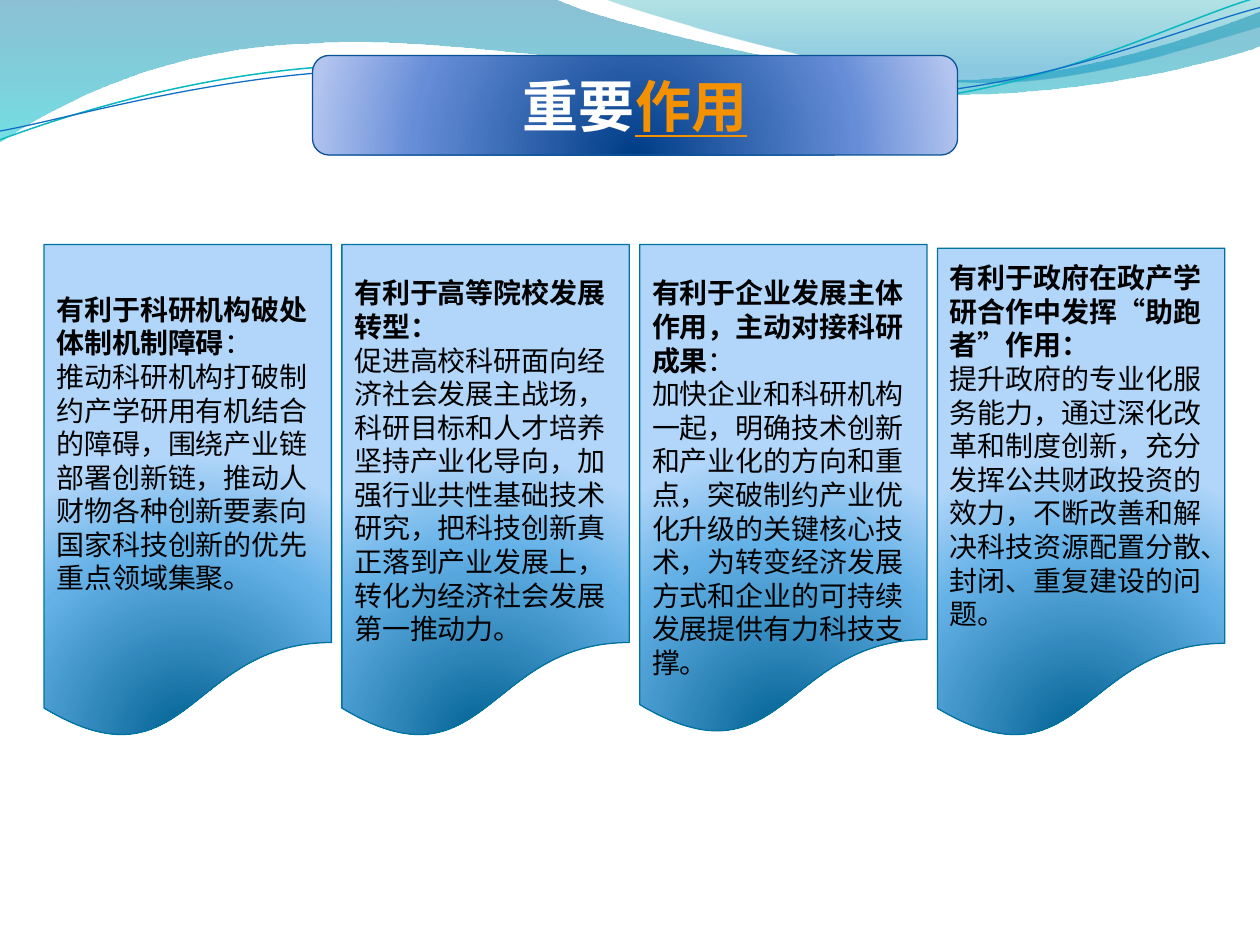
from lxml import etree
from pptx import Presentation
from pptx.dml.color import RGBColor
from pptx.enum import lang, shapes, text
from pptx.oxml import ns
from pptx.util import Inches, Pt

FONT = "Noto Sans CJK SC"
BLACK = RGBColor(0x00, 0x00, 0x00)
WHITE = RGBColor(0xFF, 0xFF, 0xFF)
ORANGE = RGBColor(0xF4, 0x91, 0x00)
PANEL_LINE = RGBColor(0x00, 0x74, 0xA1)
BANNER_LINE = RGBColor(0x09, 0x52, 0x95)
TEAL_LINE = RGBColor(0x0A, 0xB8, 0xBF)
BLUE_LINE = RGBColor(0x0F, 0x6F, 0xC6)

# Gradient stops: position %, colour, opacity %
PANEL_STOPS = [(0, RGBColor(0x00, 0x60, 0x91), 100),
               (68, RGBColor(0x64, 0xB1, 0xE7), 100),
               (100, RGBColor(0xB1, 0xD6, 0xF9), 100)]
BANNER_STOPS = [(0, RGBColor(0x00, 0x3D, 0x87), 100),
                (68, RGBColor(0x66, 0x8D, 0xD7), 100),
                (100, RGBColor(0xB3, 0xC4, 0xEF), 100)]
LEFT_WAVE_STOPS = [(0, RGBColor(0x00, 0x74, 0xA1), 45),
                   (100, RGBColor(0x00, 0xC6, 0xCF), 55)]
RIGHT_WAVE_STOPS = [(0, RGBColor(0x00, 0xA1, 0xA9), 30),
                    (80, RGBColor(0x00, 0x8B, 0xBF), 45)]

# Wave outlines in inches: two numbers are a line, six are a curve
LEFT_WAVE = [(0, 0), (4.4, -0.01), (4.76, 0.17, 6.64, 0.63, 7.58, 0.63),
             (8.53, 0.63, 9.58, 0.26, 10, 0.09), (10.01, 0.36),
             (9.83, 0.44, 8.7, 0.76, 7.46, 0.75),
             (6.22, 0.75, 3.82, 0.28, 2.57, 0.34),
             (1.29, 0.36, 0.46, 0.83, -0.01, 1.13)]
RIGHT_WAVE = [(4.79, -0.01), (5.09, 0.11, 6.82, 0.62, 7.69, 0.65),
              (8.56, 0.69, 9.61, 0.32, 10, 0.21), (10, 0)]
TEAL_CURVE = [(0, 1.11), (0.48, 0.93, 1.58, 0.57, 2.77, 0.52),
              (3.95, 0.47, 5.93, 0.89, 7.13, 0.8),
              (8.33, 0.71, 9.38, 0.15, 9.98, -0.02)]
BLUE_CURVE = [(0, 1.04), (0.47, 0.96, 1.64, 0.61, 2.83, 0.56),
              (4.03, 0.51, 5.97, 0.84, 7.17, 0.75),
              (8.36, 0.67, 9.41, 0.21, 10, 0.06)]

# Panels: top, height, space above the text, heading, plain colon, body
PANELS = [
    (1.94, 3.94, 0.38, "有利于科研机构破处体制机制障碍", "：",
     "推动科研机构打破制约产学研用有机结合的障碍，围绕产业链部署创新链，"
     "推动人财物各种创新要素向国家科技创新的优先重点领域集聚。"),
    (1.94, 3.94, 0.25, "有利于高等院校发展转型：", "",
     "促进高校科研面向经济社会发展主战场，科研目标和人才培养坚持产业化导向，"
     "加强行业共性基础技术研究，把科技创新真正落到产业发展上，"
     "转化为经济社会发展第一推动力。"),
    (1.94, 3.91, 0.25, "有利于企业发展主体作用，主动对接科研成果", "：",
     "加快企业和科研机构一起，明确技术创新和产业化的方向和重点，"
     "突破制约产业优化升级的关键核心技术，"
     "为转变经济发展方式和企业的可持续发展提供有力科技支撑。"),
    (1.97, 3.91, 0.1, "有利于政府在政产学研合作中发挥“助跑者”作用：", "",
     "提升政府的专业化服务能力，通过深化改革和制度创新，"
     "充分发挥公共财政投资的效力，不断改善和解决科技资源配置分散、"
     "封闭、重复建设的问题。"),
]


def fill_gradient(shape, stops, radial):
    """Gradient with opacity: from below the shape, or straight down."""
    shape.fill.solid()
    properties = shape.fill._xPr
    old_fill = properties.find(ns.qn("a:solidFill"))
    gradient = etree.Element(ns.qn("a:gradFill"), rotWithShape="1")
    stop_list = etree.SubElement(gradient, ns.qn("a:gsLst"))
    for position, color, opacity in stops:
        stop = etree.SubElement(stop_list, ns.qn("a:gs"), pos=str(position * 1000))
        value = etree.SubElement(stop, ns.qn("a:srgbClr"), val=str(color))
        if opacity < 100:
            etree.SubElement(value, ns.qn("a:alpha"), val=str(opacity * 1000))
    if radial:
        focus = etree.SubElement(gradient, ns.qn("a:path"), path="circle")
        etree.SubElement(focus, ns.qn("a:fillToRect"),
                         l="50000", t="130000", r="50000", b="-30000")
    else:
        etree.SubElement(gradient, ns.qn("a:lin"), ang="5400000", scaled="0")
    properties.replace(old_fill, gradient)


def set_line(shape, color, width):
    shape.line.color.rgb = color
    shape.line.width = Pt(width)


def add_span(para, words, size, color, bold=False, underline=False):
    span = para.add_run()
    span.text = words
    font = span.font
    font.name, font.size, font.bold = FONT, Pt(size), bold
    if underline:
        font.underline = True
    font.color.rgb = color
    font.language_id = lang.MSO_LANGUAGE_ID.SIMPLIFIED_CHINESE
    east_asian = etree.Element(ns.qn("a:ea"), typeface=FONT)
    font._element.find(ns.qn("a:latin")).addnext(east_asian)


def add_outline(page, outline, close):
    """Freeform through the end points, with its curved parts bent."""
    start, *ends = [(Inches(part[-2]), Inches(part[-1])) for part in outline]
    builder = page.shapes.build_freeform(*start, scale=1.0)
    builder.add_line_segments(ends, close=close)
    shape = builder.convert_to_shape()
    shape.shadow.inherit = False
    segments = list(shape._element.spPr.iter(ns.qn("a:lnTo")))
    for segment, part in zip(segments, outline[1:]):
        if len(part) == 6:
            curve = etree.Element(ns.qn("a:cubicBezTo"))
            for x, y in zip(part[::2], part[1::2]):
                etree.SubElement(curve, ns.qn("a:pt"), x=str(Inches(x) - shape.left),
                                 y=str(Inches(y) - shape.top))
            segment.getparent().replace(segment, curve)
    return shape


def add_waves(page):
    # Tinted bands
    for outline, stops in ((LEFT_WAVE, LEFT_WAVE_STOPS), (RIGHT_WAVE, RIGHT_WAVE_STOPS)):
        band = add_outline(page, outline, True)
        fill_gradient(band, stops, radial=False)
        band.line.fill.background()
    # Thin curves
    for outline, color, width in ((TEAL_CURVE, TEAL_LINE, 0.85), (BLUE_CURVE, BLUE_LINE, 0.75)):
        curve = add_outline(page, outline, False)
        curve.fill.background()
        set_line(curve, color, width)


def add_box(page, kind, frame_box, stops, line_color):
    """Preset shape with a radial gradient and a thin line."""
    box = page.shapes.add_shape(kind, *frame_box)
    box.shadow.inherit = False
    fill_gradient(box, stops, radial=True)
    set_line(box, line_color, 0.75)
    box.text_frame.word_wrap = True
    return box


def add_panel(page, frame_box, space_above, heading, colon, body):
    box = add_box(page, shapes.MSO_SHAPE.FLOWCHART_DOCUMENT, frame_box,
                  PANEL_STOPS, PANEL_LINE)
    frame = box.text_frame
    frame.vertical_anchor = text.MSO_ANCHOR.TOP
    frame.margin_top, frame.margin_bottom = space_above, 0
    para = frame.paragraphs[0]
    add_span(para, heading, 16, BLACK, bold=True)
    if colon:
        add_span(para, colon, 16, BLACK)
    add_span(frame.add_paragraph(), body, 16, BLACK)
    for para in frame.paragraphs:
        para.alignment = text.PP_ALIGN.LEFT


def add_banner(page, frame_box):
    box = add_box(page, shapes.MSO_SHAPE.ROUNDED_RECTANGLE, frame_box,
                  BANNER_STOPS, BANNER_LINE)
    box.text_frame.vertical_anchor = text.MSO_ANCHOR.MIDDLE
    para = box.text_frame.paragraphs[0]
    para.alignment = text.PP_ALIGN.CENTER
    add_span(para, "重要", 32, WHITE, bold=True)
    add_span(para, "作用", 32, ORANGE, bold=True, underline=True)


def main():
    deck = Presentation()
    deck.slide_width, deck.slide_height = Inches(10), Inches(7.5)
    page = deck.slides.add_slide(deck.slide_layouts[6])
    add_waves(page)
    first, last = 0.35, 7.44
    step = (last - first) / (len(PANELS) - 1)
    for index, (top, height, space_above, *words) in enumerate(PANELS):
        frame_box = (Inches(first + index * step), Inches(top), Inches(2.28), Inches(height))
        add_panel(page, frame_box, Inches(space_above), *words)
    add_banner(page, (Inches(2.48), Inches(0.44), Inches(5.12), Inches(0.79)))
    deck.save("out.pptx")


if __name__ == "__main__":
    main()
